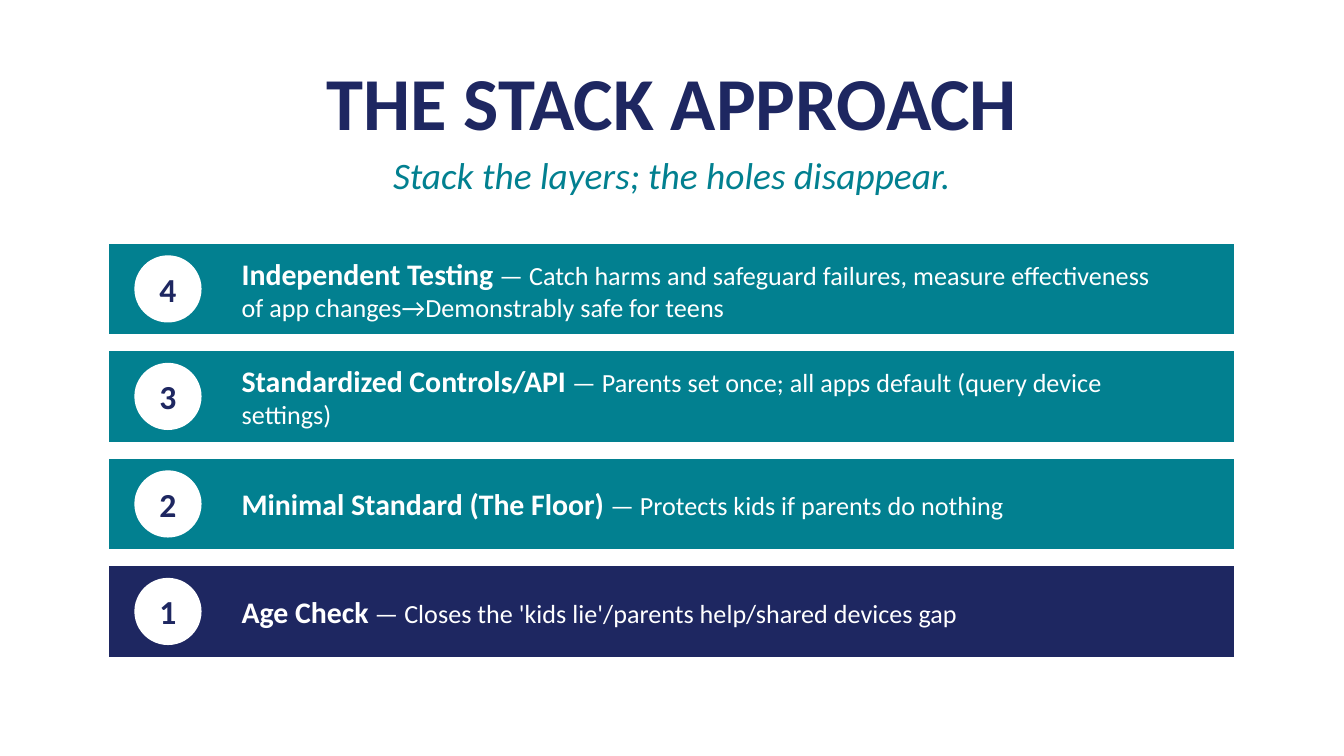
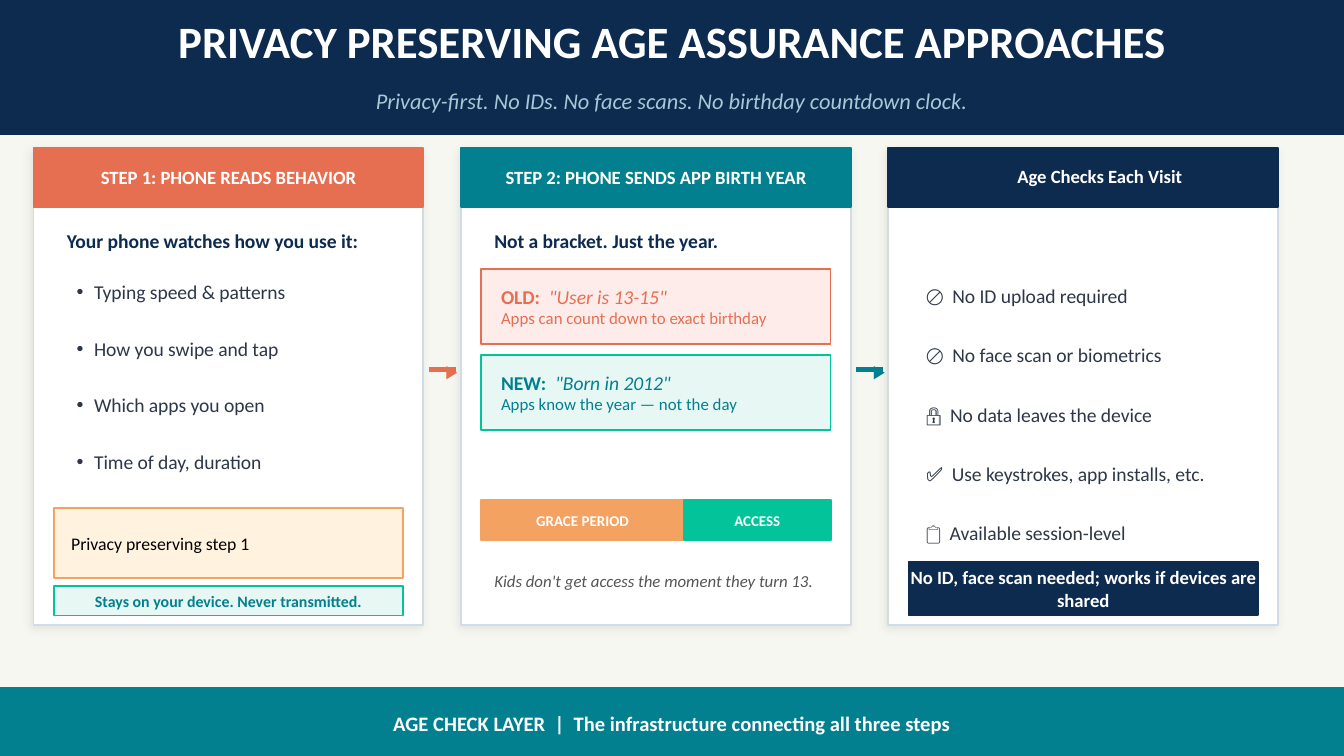
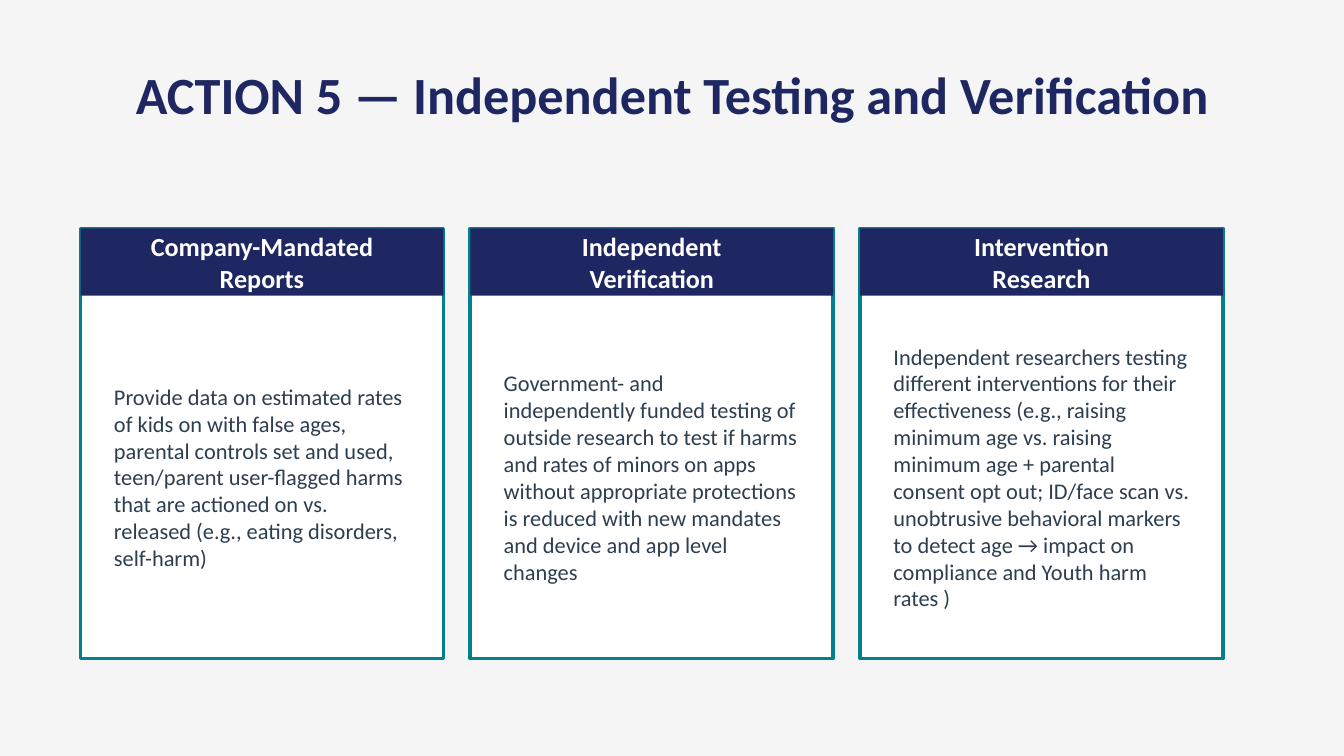
from lxml import etree
from pptx import Presentation
from pptx.dml.color import RGBColor
from pptx.enum.shapes import MSO_CONNECTOR as Connector, MSO_SHAPE as Preset
from pptx.enum.text import MSO_ANCHOR as Anchor, MSO_AUTO_SIZE as AutoSize, PP_ALIGN as Align
from pptx.oxml.ns import qn
from pptx.util import Emu, Pt

EMU_PER_PX = 9144  # 100 px to the inch
FONT = "Calibri"
TITLE_ONLY, TWO_CONTENT = 5, 3

WHITE = RGBColor(0xFF, 0xFF, 0xFF)
BLACK = RGBColor(0x00, 0x00, 0x00)
INDIGO = RGBColor(0x1E, 0x27, 0x61)
NAVY = RGBColor(0x0D, 0x2B, 0x4E)
TEAL = RGBColor(0x02, 0x80, 0x90)
MINT = RGBColor(0x02, 0xC3, 0x9A)
PALE_MINT = RGBColor(0xE6, 0xF7, 0xF4)
CORAL = RGBColor(0xE7, 0x6F, 0x51)
PALE_CORAL = RGBColor(0xFD, 0xEC, 0xEA)
AMBER = RGBColor(0xF4, 0xA2, 0x61)
PALE_AMBER = RGBColor(0xFF, 0xF3, 0xE0)
PALE_BLUE = RGBColor(0xA8, 0xC8, 0xD8)
CARD_EDGE = RGBColor(0xD0, 0xDC, 0xE8)
INK = RGBColor(0x2D, 0x37, 0x48)
SLATE = RGBColor(0x2C, 0x3E, 0x50)
GRAY = RGBColor(0x55, 0x55, 0x55)
CREAM = RGBColor(0xF7, 0xF7, 0xF2)
LIGHT_GRAY = RGBColor(0xF5, 0xF5, 0xF5)

NO_INSET = (0, 0, 0, 0)
TEXT_INSET = (10, 5, 10, 5)
LIST_LINE = 13  # points


def px(length):
    return Emu(length * EMU_PER_PX)


def style(size, color, **flags):
    return {"size": Pt(size), "color": color, "name": FONT, **flags}


def add_page(deck, layout, color):
    page = deck.slides.add_slide(deck.slide_layouts[layout])
    page.background.fill.solid()
    page.background.fill.fore_color.rgb = color
    return page


def write(shape, paras, align=Align.LEFT, inset=TEXT_INSET):
    """Fill a shape with paragraphs, each a list of (text, style) runs."""
    frame = shape.text_frame
    left, top, right, bottom = map(px, inset)
    settings = {"word_wrap": True, "auto_size": AutoSize.NONE,
                "vertical_anchor": Anchor.MIDDLE, "margin_left": left,
                "margin_top": top, "margin_right": right, "margin_bottom": bottom}
    for name, value in settings.items():
        setattr(frame, name, value)
    for index, runs in enumerate(paras):
        para = frame.paragraphs[0] if index == 0 else frame.add_paragraph()
        para.alignment = align
        para.space_before = Pt(0)
        for text, look in runs:
            span = para.add_run()
            span.text = text
            for name, value in look.items():
                if name == "color":
                    span.font.color.rgb = value
                else:
                    setattr(span.font, name, value)


def add_text(page, at, paras, align=Align.LEFT, inset=TEXT_INSET):
    box = page.shapes.add_textbox(*map(px, at))
    write(box, paras, align, inset)


def add_box(page, at, fill, line=None, width=1, preset=Preset.RECTANGLE):
    box = page.shapes.add_shape(preset, *map(px, at))
    box.shadow.inherit = False
    box.fill.solid()
    box.fill.fore_color.rgb = fill
    if line is None:
        box.line.fill.background()
    else:
        box.line.color.rgb = line
        box.line.width = Pt(width)
    return box


def add_label(page, at, text, look, fill, line=None):
    """A filled box with one centred line of text."""
    box = add_box(page, at, fill, line)
    write(box, [[(text, look)]], Align.CENTER, NO_INSET)


def add_soft_shadow(box):
    effects = box.element.spPr.find(qn("a:effectLst"))
    shadow = etree.SubElement(effects, qn("a:outerShdw"), blurRad=str(Pt(5)),
                              dist=str(Pt(2)), dir=str(135 * 60000))
    color = etree.SubElement(shadow, qn("a:srgbClr"), val=str(BLACK))
    etree.SubElement(color, qn("a:alpha"), val="8000")


def place(holder, at):
    """Move a placeholder and bring it in front of what is drawn so far."""
    holder.left, holder.top, holder.width, holder.height = map(px, at)
    holder.element.getparent().append(holder.element)


def set_title(page, at, text, look, inset=TEXT_INSET):
    title = page.shapes.title
    place(title, at)
    write(title, [[(text, look)]], Align.CENTER, inset)


def set_list(holder, at, items, look, pitch, bulleted):
    """Fill a body placeholder with lines that lie pitch px apart."""
    place(holder, at)
    write(holder, [[(item, look)] for item in items])
    for index, para in enumerate(holder.text_frame.paragraphs):
        para.line_spacing = Pt(LIST_LINE)
        if index:
            para.space_before = Pt(pitch * 0.72 - LIST_LINE)
        margin, indent = (20, -13) if bulleted else (0, 0)
        properties = para._p.get_or_add_pPr()
        properties.set("marL", str(px(margin)))
        properties.set("indent", str(px(indent)))
        if not bulleted:
            etree.SubElement(properties, qn("a:buNone"))


def add_arrow(page, left, color):
    middle = 275
    line = page.shapes.add_connector(
        Connector.STRAIGHT, px(left), px(middle), px(left + 20), px(middle))
    line.line.color.rgb = color
    line.line.width = Pt(2.5)
    etree.SubElement(line.element.spPr, qn("a:effectLst"))
    add_text(page, (left + 6, 260, 22, 32), [[("▶", style(10, color))]],
             Align.CENTER, NO_INSET)


def add_layer(page, top, number, name, detail, fill):
    add_box(page, (80, top, 840, 70), fill, WHITE, 2)
    badge = add_box(page, (100, top + 10, 50, 50), WHITE, preset=Preset.OVAL)
    write(badge, [[(str(number), style(18, INDIGO, bold=True))]], Align.CENTER, NO_INSET)
    add_text(page, (170, top + 10, 700, 50),
             [[(name, style(16, WHITE, bold=True)), (" — " + detail, style(14, WHITE))]])


def build_stack(deck):
    page = add_page(deck, TITLE_ONLY, WHITE)
    set_title(page, (50, 40, 900, 70), "THE STACK APPROACH", style(40, INDIGO, bold=True))
    add_text(page, (50, 110, 900, 40),
             [[("Stack the layers; the holes disappear.", style(20, TEAL, italic=True))]],
             Align.CENTER)
    layers = [
        ("Independent Testing", "Catch harms and safeguard failures, measure effectiveness "
         "of app changes→Demonstrably safe for teens"),
        ("Standardized Controls/API",
         "Parents set once; all apps default (query device settings)"),
        ("Minimal Standard (The Floor)", "Protects kids if parents do nothing"),
        ("Age Check", "Closes the 'kids lie'/parents help/shared devices gap"),
    ]
    for index, (name, detail) in enumerate(layers):
        number = len(layers) - index
        add_layer(page, 180 + 80 * index, number, name, detail,
                  INDIGO if number == 1 else TEAL)


def add_step_card(page, left, heading, color, align=Align.CENTER, inset=NO_INSET):
    add_soft_shadow(add_box(page, (left, 110, 290, 355), WHITE, CARD_EDGE))
    header = add_box(page, (left, 110, 290, 44), color, color)
    write(header, [[(heading, style(10, WHITE, bold=True))]], align, inset)


def add_lead(page, left, text):
    add_text(page, (left, 162, 260, 34), [[(text, style(10.5, NAVY, bold=True))]])


def add_signal(page, top, tag, quote, note, color, fill, line):
    """A box that shows what an app is told and what it learns from that."""
    add_box(page, (358, top, 260, 56), fill, line)
    add_text(page, (363, top, 250, 56), [
        [(tag + "  ", style(10.5, color, bold=True)),
         (quote, style(10.5, color, italic=True))],
        [(note, style(9, color))]])


def build_age_assurance(deck):
    page = add_page(deck, TWO_CONTENT, CREAM)
    behaviors, promises = [holder for holder in page.placeholders
                           if holder.placeholder_format.idx]
    item = style(10.5, INK)

    add_box(page, (0, 0, 1000, 100), NAVY, NAVY)
    set_title(page, (30, 4, 940, 52), "PRIVACY PRESERVING AGE ASSURANCE APPROACHES",
              style(24, WHITE, bold=True), NO_INSET)
    add_text(page, (30, 56, 940, 38),
             [[("Privacy-first. No IDs. No face scans. No birthday countdown clock.",
                style(12, PALE_BLUE, italic=True))]], Align.CENTER, NO_INSET)
    add_arrow(page, 319, CORAL)
    add_arrow(page, 637, TEAL)

    add_step_card(page, 25, "STEP 1: PHONE READS BEHAVIOR", CORAL)
    add_lead(page, 40, "Your phone watches how you use it:")
    set_list(behaviors, (40, 198, 260, 164),
             ["Typing speed & patterns", "How you swipe and tap",
              "Which apps you open", "Time of day, duration"], item, 42, True)
    privacy = add_box(page, (40, 378, 260, 52), PALE_AMBER, AMBER)
    write(privacy, [[("Privacy preserving step 1", style(9.5, BLACK))]], inset=(13, 5, 13, 5))
    add_label(page, (40, 436, 260, 22), "Stays on your device. Never transmitted.",
              style(8.5, TEAL, bold=True), PALE_MINT, MINT)

    add_step_card(page, 343, "STEP 2: PHONE SENDS APP BIRTH YEAR", TEAL)
    add_lead(page, 358, "Not a bracket. Just the year.")
    add_signal(page, 200, "OLD:", '"User is 13-15"',
               "Apps can count down to exact birthday", CORAL, PALE_CORAL, CORAL)
    add_signal(page, 264, "NEW:", '"Born in 2012"',
               "Apps know the year — not the day", TEAL, PALE_MINT, MINT)
    phase = style(8, WHITE, bold=True)
    add_label(page, (358, 372, 151, 30), "GRACE PERIOD", phase, AMBER, AMBER)
    add_label(page, (509, 372, 109, 30), "ACCESS", phase, MINT, MINT)
    add_text(page, (358, 406, 260, 52),
             [[("Kids don't get access the moment they turn 13.",
                style(9, GRAY, italic=True))]])

    add_step_card(page, 661, "Age Checks Each Visit", NAVY, Align.LEFT, (96, 0, 0, 2))
    set_list(promises, (679, 200, 254, 216),
             ["🚫  No ID upload required", "🚫  No face scan or biometrics",
              "🔒  No data leaves the device", "✅  Use keystrokes, app installs, etc.",
              "📋  Available session-level"], item, 44, False)
    add_label(page, (676, 418, 260, 40),
              "No ID, face scan needed; works if devices are shared",
              style(10, WHITE, bold=True), NAVY, NAVY)

    add_label(page, (0, 512, 1000, 52),
              "AGE CHECK LAYER  |  The infrastructure connecting all three steps",
              style(11, WHITE, bold=True), TEAL, TEAL)


def add_action_card(page, left, heading, body):
    add_box(page, (left, 170, 270, 320), WHITE, TEAL, 2)
    header = add_box(page, (left, 170, 270, 50), INDIGO)
    write(header, [[(line, style(14, WHITE, bold=True))] for line in heading], Align.CENTER)
    add_text(page, (left + 15, 240, 240, 230), [[(body, style(12, SLATE))]])


def build_testing(deck):
    page = add_page(deck, TITLE_ONLY, LIGHT_GRAY)
    set_title(page, (50, 40, 900, 60), "ACTION 5 — Independent Testing and Verification",
              style(28, INDIGO, bold=True))
    cards = [
        (("Company-Mandated", "Reports"),
         "Provide data on estimated rates of kids on with false ages, parental controls set "
         "and used, teen/parent user-flagged harms that are actioned on vs. released "
         "(e.g., eating disorders, self-harm)"),
        (("Independent", "Verification"),
         "Government- and independently funded testing of outside research to test if harms "
         "and rates of minors on apps without appropriate protections is reduced with new "
         "mandates and device and app level changes"),
        (("Intervention", "Research"),
         "Independent researchers testing different interventions for their effectiveness "
         "(e.g., raising minimum age vs. raising minimum age + parental consent opt out; "
         "ID/face scan vs. unobtrusive behavioral markers to detect age → impact on "
         "compliance and Youth harm rates )"),
    ]
    for index, (heading, body) in enumerate(cards):
        add_action_card(page, 60 + 290 * index, heading, body)


def main():
    deck = Presentation()
    deck.slide_width = px(1000)
    deck.slide_height = Emu(deck.slide_width * 9 // 16)
    build_stack(deck)
    build_age_assurance(deck)
    build_testing(deck)
    deck.save("out.pptx")


if __name__ == "__main__":
    main()
